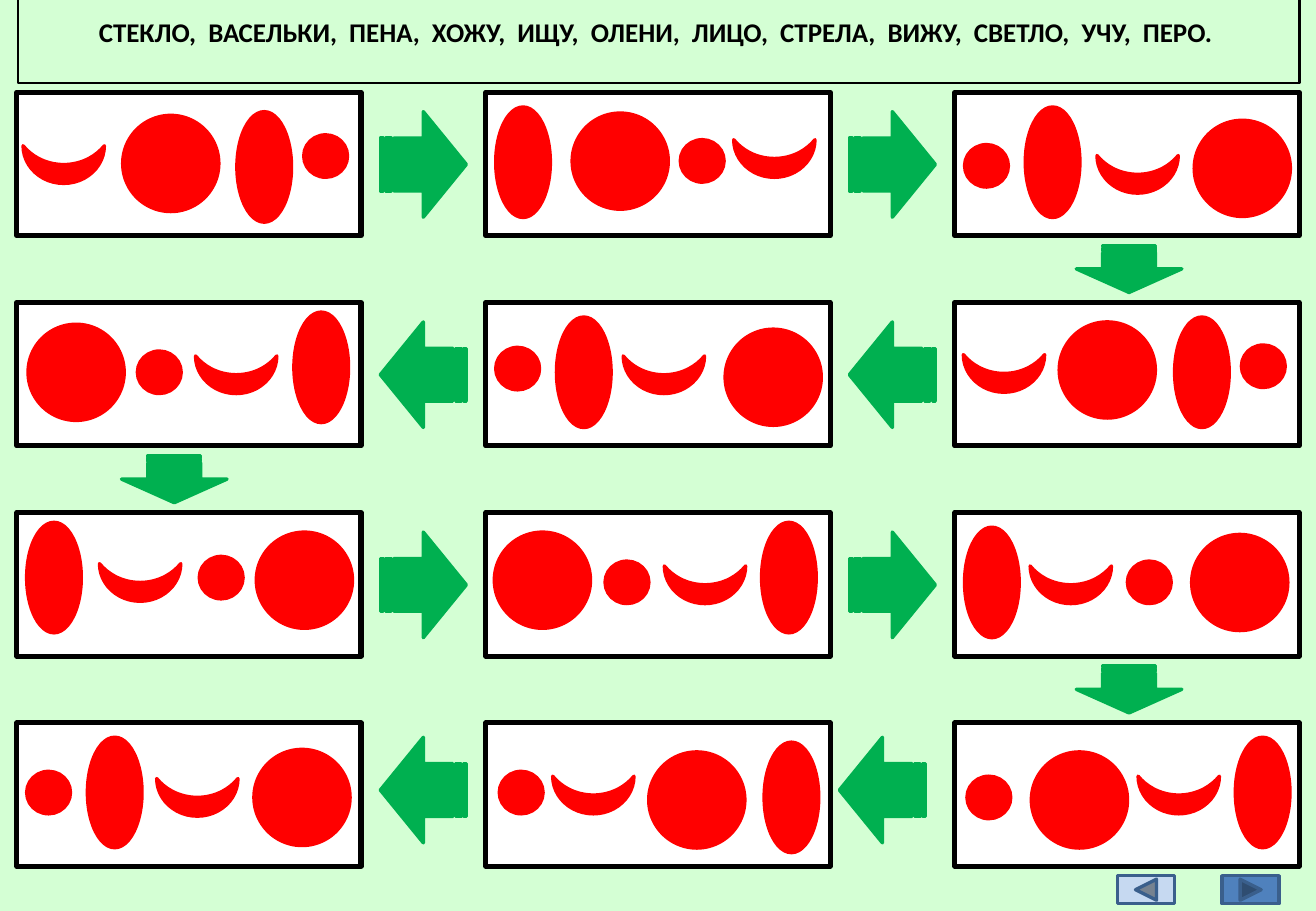
from dataclasses import dataclass

from pptx import Presentation
from pptx.dml.color import RGBColor
from pptx.enum.shapes import MSO_SHAPE
from pptx.enum.text import MSO_ANCHOR, MSO_AUTO_SIZE, PP_ALIGN
from pptx.util import Pt

RECTANGLE = MSO_SHAPE.RECTANGLE
ELLIPSE = MSO_SHAPE.OVAL
MOON = MSO_SHAPE.MOON
ARROW = MSO_SHAPE.STRIPED_RIGHT_ARROW
BACK = MSO_SHAPE.ACTION_BUTTON_BACK_OR_PREVIOUS
FORWARD = MSO_SHAPE.ACTION_BUTTON_FORWARD_OR_NEXT
CENTER = PP_ALIGN.CENTER
MIDDLE = MSO_ANCHOR.MIDDLE
GROW = MSO_AUTO_SIZE.SHAPE_TO_FIT_TEXT


@dataclass(frozen=True)
class Theme:
    """Colours, font and type size of the slide."""
    background: str = "D4FFD4"
    card: str = "FFFFFF"
    ink: str = "000000"
    figure: str = "FF0000"
    arrow: str = "00B050"
    back: str = "C6D9F1"
    forward: str = "4F81BD"
    button_line: str = "3A5F8C"
    font: str = "Calibri"
    title_size: float = 16


THEME = Theme()
WORDS = ("СТЕКЛО", "ВАСЕЛЬКИ", "ПЕНА", "ХОЖУ", "ИЩУ", "ОЛЕНИ",
         "ЛИЦО", "СТРЕЛА", "ВИЖУ", "СВЕТЛО", "УЧУ", "ПЕРО")

GRID_LEFT, GRID_TOP = 10, 54.7
COLUMN_STEP, ROW_STEP = 278, 124.6
CARD_WIDTH, CARD_HEIGHT = 204, 85

FIGURES = {
    "big": (ELLIPSE, 57, 57, 0),
    "tall": (ELLIPSE, 32.4, 65.5, 0),
    "small": (ELLIPSE, 26, 25.2, 0),
    "moon": (MOON, 48.2, 22.3, 270),
}

CARDS = (
    ((("moon", 3.7, 31.7), ("big", 62.7, 13.7), ("tall", 130.4, 11.5), ("small", 170, 25.2)),
     (("tall", 5.8, 8.7), ("big", 51.1, 12.3), ("small", 115.2, 28.1), ("moon", 146.9, 28.1)),
     (("small", 5.7, 31), ("tall", 41.7, 8.7), ("moon", 84.2, 37.5), ("big", 141.8, 16.6))),
    ((("big", 6.6, 12.9), ("small", 71.4, 28.8), ("moon", 105.9, 31.7), ("tall", 164.2, 5.7)),
     (("small", 5.8, 26.6), ("tall", 41.8, 8.6), ("moon", 81.4, 31.7), ("big", 141.8, 15.8)),
     (("moon", 5, 30.9), ("big", 61.8, 11.5), ("tall", 130.2, 8.6), ("small", 169.8, 25.2))),
    ((("tall", 5.8, 5.7), ("moon", 49, 30.2), ("small", 108.1, 25.9), ("big", 141.9, 11.5)),
     (("big", 5, 11.5), ("small", 70.6, 28.7), ("moon", 105.8, 31.6), ("tall", 163.4, 5.7)),
     (("tall", 5.7, 8.6), ("moon", 44.6, 31.6), ("small", 102.2, 28.7), ("big", 140.3, 12.9))),
    ((("small", 5.8, 28.7), ("tall", 41.8, 8.5), ("moon", 82.9, 33), ("big", 140.5, 15.7)),
     (("small", 7.9, 28.7), ("moon", 39.6, 31.6), ("big", 96.5, 17.2), ("tall", 164.9, 11.4)),
     (("small", 7.1, 31.6), ("big", 45.3, 17.2), ("moon", 108.6, 31.6), ("tall", 166.2, 8.5))),
)

SIDE_ARROWS = (
    ((215.4, 11.5), (215.4, 11.5)),
    ((215.4, 11.5), (215.4, 11.5)),
    ((215.4, 11.5), (215.4, 11.5)),
    ((215.4, 8.5), (209.5, 8.5)),
)
DOWN_ARROWS = ((0, 2, 71.9), (1, 0, 62), (2, 2, 71.9))


def color(value):
    """Turn a hex string into a colour."""
    return RGBColor.from_string(value)


def add_figure(slide, kind, box, fill, line, line_width=2, rotation=0):
    """Add a preset shape whose box is the one seen after rotation."""
    left, top, width, height = box
    if rotation in (90, 270):
        left, top = left + (width - height) / 2, top + (height - width) / 2
        width, height = height, width
    shape = slide.shapes.add_shape(kind, Pt(left), Pt(top), Pt(width), Pt(height))
    shape.rotation = rotation
    shape.shadow.inherit = False
    shape.fill.solid()
    shape.fill.fore_color.rgb = color(fill)
    shape.line.color.rgb = color(line)
    shape.line.width = Pt(line_width)


def add_word_list(slide, box):
    """Place the framed list of words in the title placeholder."""
    title = slide.shapes.title
    title.left, title.top, title.width, title.height = map(Pt, box)
    title.line.color.rgb = color(THEME.ink)
    title.line.width = Pt(1.5)
    frame = title.text_frame
    frame.word_wrap = True
    frame.auto_size = GROW
    frame.vertical_anchor = MIDDLE
    paragraph = frame.paragraphs[0]
    paragraph.alignment = CENTER
    run = paragraph.add_run()
    run.text = ",  ".join(WORDS) + ". "
    run.font.name = THEME.font
    run.font.size = Pt(THEME.title_size)
    run.font.bold = True
    run.font.color.rgb = color(THEME.ink)


def card_origin(row, column):
    """Return the left and top of a card in the grid."""
    return GRID_LEFT + column * COLUMN_STEP, GRID_TOP + row * ROW_STEP


def add_card(slide, box, figures):
    """Draw a card and the figures that encode one word."""
    left, top = box[:2]
    add_figure(slide, RECTANGLE, box, THEME.card, THEME.ink, 3)
    for name, offset_x, offset_y in figures:
        kind, width, height, rotation = FIGURES[name]
        add_figure(slide, kind, (left + offset_x, top + offset_y, width, height),
                   THEME.figure, THEME.figure, rotation=rotation)


def add_cards(slide):
    """Draw the grid of cards."""
    for row, cards in enumerate(CARDS):
        for column, figures in enumerate(cards):
            box = (*card_origin(row, column), CARD_WIDTH, CARD_HEIGHT)
            add_card(slide, box, figures)


def add_arrows(slide):
    """Draw the winding route from the first card to the last."""
    for row, offsets in enumerate(SIDE_ARROWS):
        for column, (offset_x, offset_y) in enumerate(offsets):
            left, top = card_origin(row, column)
            add_figure(slide, ARROW, (left + offset_x, top + offset_y, 51, 62.6),
                       THEME.arrow, THEME.arrow, rotation=180 * (row % 2))
    for row, column, offset_x in DOWN_ARROWS:
        left, top = card_origin(row, column)
        add_figure(slide, ARROW, (left + offset_x, top + 90.7, 62.6, 28),
                   THEME.arrow, THEME.arrow, rotation=90)


def add_buttons(slide, box):
    """Place the back and forward buttons at the two ends of the box."""
    left, top, width, height = box
    button_width = 33.8
    add_figure(slide, BACK, (left, top, button_width, height),
               THEME.back, THEME.button_line)
    add_figure(slide, FORWARD, (left + width - button_width, top, button_width, height),
               THEME.forward, THEME.button_line)


def build_word_slide(presentation):
    """Build the slide of words and figure codes."""
    slide = presentation.slides.add_slide(presentation.slide_layouts[5])
    slide.background.fill.solid()
    slide.background.fill.fore_color.rgb = color(THEME.background)
    add_word_list(slide, (10.8, 5.8, 759.6, 26.6))
    add_cards(slide)
    add_arrows(slide)
    add_buttons(slide, (662.4, 519.1, 95.8, 16.6))


def main():
    """Create and save the presentation."""
    presentation = Presentation()
    presentation.slide_width, presentation.slide_height = Pt(780), Pt(540)
    build_word_slide(presentation)
    presentation.save("out.pptx")


if __name__ == "__main__":
    main()
